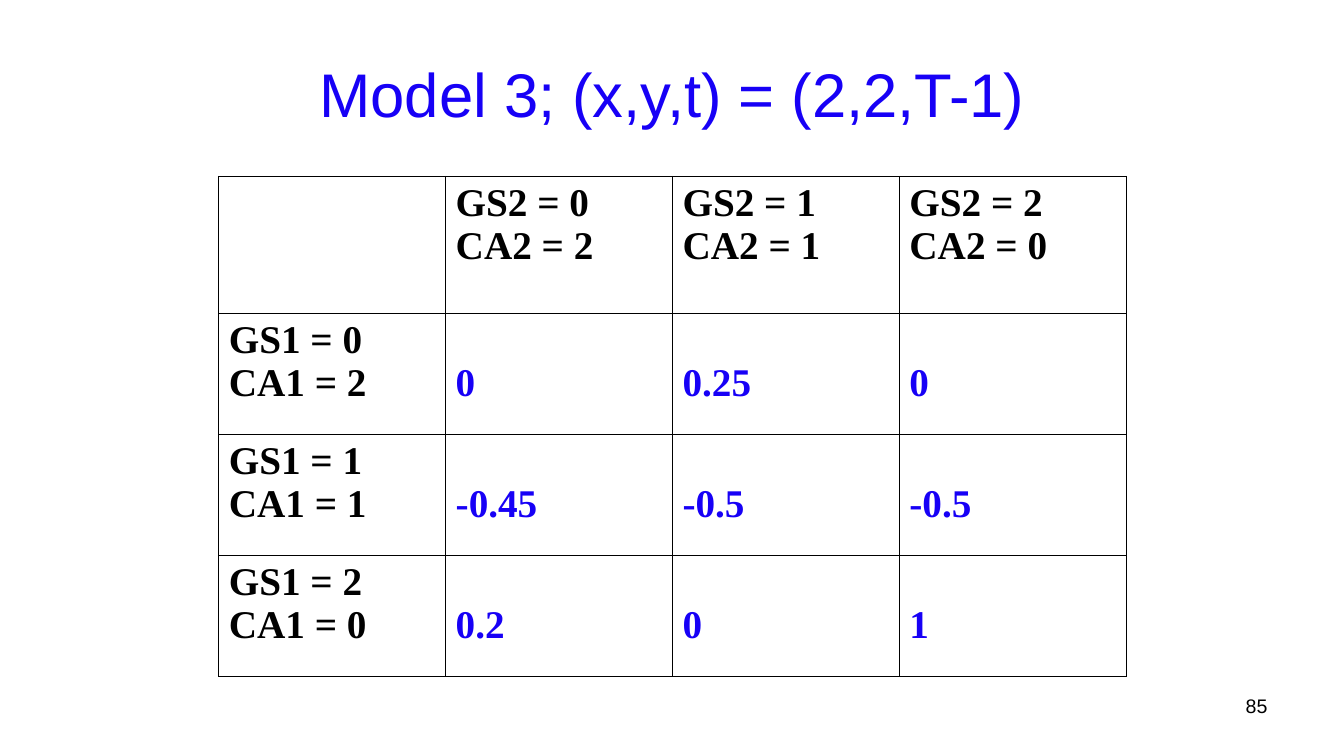
from lxml.etree import SubElement
from pptx import Presentation
from pptx.dml.color import RGBColor
from pptx.enum.text import MSO_ANCHOR, PP_ALIGN
from pptx.oxml.ns import qn
from pptx.util import Pt

TITLE = "Model 3; (x,y,t) = (2,2,T-1)"
PAGE_NUMBER = "85"
COLUMN_HEADS = [("GS2 = 0", "CA2 = 2"), ("GS2 = 1", "CA2 = 1"), ("GS2 = 2", "CA2 = 0")]
ROW_HEADS = [("GS1 = 0", "CA1 = 2"), ("GS1 = 1", "CA1 = 1"), ("GS1 = 2", "CA1 = 0")]
VALUES = [
    ["0", "0.25", "0"],
    ["-0.45", "-0.5", "-0.5"],
    ["0.2", "0", "1"],
]

COLORS = {"text": "000000", "accent": "1700F6", "cell": "FFFFFF", "border": "000000"}
TITLE_FONT = {"name": "Arial", "size": Pt(44), "bold": False}
NUMBER_FONT = {"name": "Arial", "size": Pt(14)}
TABLE_FONT = {"name": "Times New Roman", "size": Pt(28), "bold": True}

EMU_PER_PX = 9144  # 100 px to the inch
PAGE_SIZE = (1333, 750)
TITLE_BOX = (67, 30, 1200, 125)
NUMBER_BOX = (956, 683, 311, 52)
TABLE_LEFT, TABLE_TOP = 217, 175
COLUMN_WIDTH = 225
ROW_HEIGHTS = [136, 120, 120, 120]
CELL_MARGIN = 5
TEXT_LINE = 43
HANGING_INDENT = 38


def px(length):
    return length * EMU_PER_PX


def set_all(target, values):
    for name, value in values.items():
        setattr(target, name, value)


def write(para, text, font, color, align=PP_ALIGN.LEFT):
    para.alignment = align
    span = para.add_run()
    span.text = text
    set_all(span.font, font)
    span.font.color.rgb = RGBColor.from_string(COLORS[color])


def draw_borders(cell):
    properties = cell._tc.get_or_add_tcPr()
    for position, side in enumerate(("lnL", "lnR", "lnT", "lnB")):
        line = SubElement(properties, qn(f"a:{side}"), w=str(Pt(1)))
        fill = SubElement(line, qn("a:solidFill"))
        SubElement(fill, qn("a:srgbClr"), val=COLORS["border"])
        properties.insert(position, line)


def fill_cell(cell, lines, color, lines_down):
    """Write lines into a cell, starting the given number of text lines down."""
    cell.fill.solid()
    cell.fill.fore_color.rgb = RGBColor.from_string(COLORS["cell"])
    cell.margin_top = px(CELL_MARGIN + lines_down * TEXT_LINE)
    draw_borders(cell)
    frame = cell.text_frame
    for index, text in enumerate(lines):
        para = frame.add_paragraph() if index else frame.paragraphs[0]
        write(para, text, TABLE_FONT, color)
        indent = px(HANGING_INDENT)
        set_all_xml = {"marL": indent, "indent": -indent}
        for name, value in set_all_xml.items():
            para._p.get_or_add_pPr().set(name, str(value))


def add_title(page):
    title = page.shapes.title
    set_all(title, dict(zip(("left", "top", "width", "height"), map(px, TITLE_BOX))))
    title.text_frame.vertical_anchor = MSO_ANCHOR.MIDDLE
    write(title.text_frame.paragraphs[0], TITLE, TITLE_FONT, "accent", PP_ALIGN.CENTER)


def add_page_number(page):
    frame = page.shapes.add_textbox(*map(px, NUMBER_BOX)).text_frame
    frame.word_wrap = True
    write(frame.paragraphs[0], PAGE_NUMBER, NUMBER_FONT, "text", PP_ALIGN.RIGHT)


def add_payoff_table(page):
    rows = [[()] + COLUMN_HEADS]
    rows += [[head] + [(value,) for value in values] for head, values in zip(ROW_HEADS, VALUES)]
    columns = len(rows[0])
    table = page.shapes.add_table(
        len(rows), columns, px(TABLE_LEFT), px(TABLE_TOP),
        px(columns * COLUMN_WIDTH), px(sum(ROW_HEIGHTS)),
    ).table
    set_all(table, {"first_row": False, "horz_banding": False})
    for column in table.columns:
        column.width = px(COLUMN_WIDTH)
    for r, (cells, height) in enumerate(zip(rows, ROW_HEIGHTS)):
        table.rows[r].height = px(height)
        for c, lines in enumerate(cells):
            is_value = r > 0 and c > 0
            fill_cell(table.cell(r, c), lines, "accent" if is_value else "text", int(is_value))


def main():
    deck = Presentation()
    deck.slide_width, deck.slide_height = map(px, PAGE_SIZE)
    page = deck.slides.add_slide(deck.slide_layouts[5])
    add_page_number(page)
    add_title(page)
    add_payoff_table(page)
    deck.save("out.pptx")


if __name__ == "__main__":
    main()
